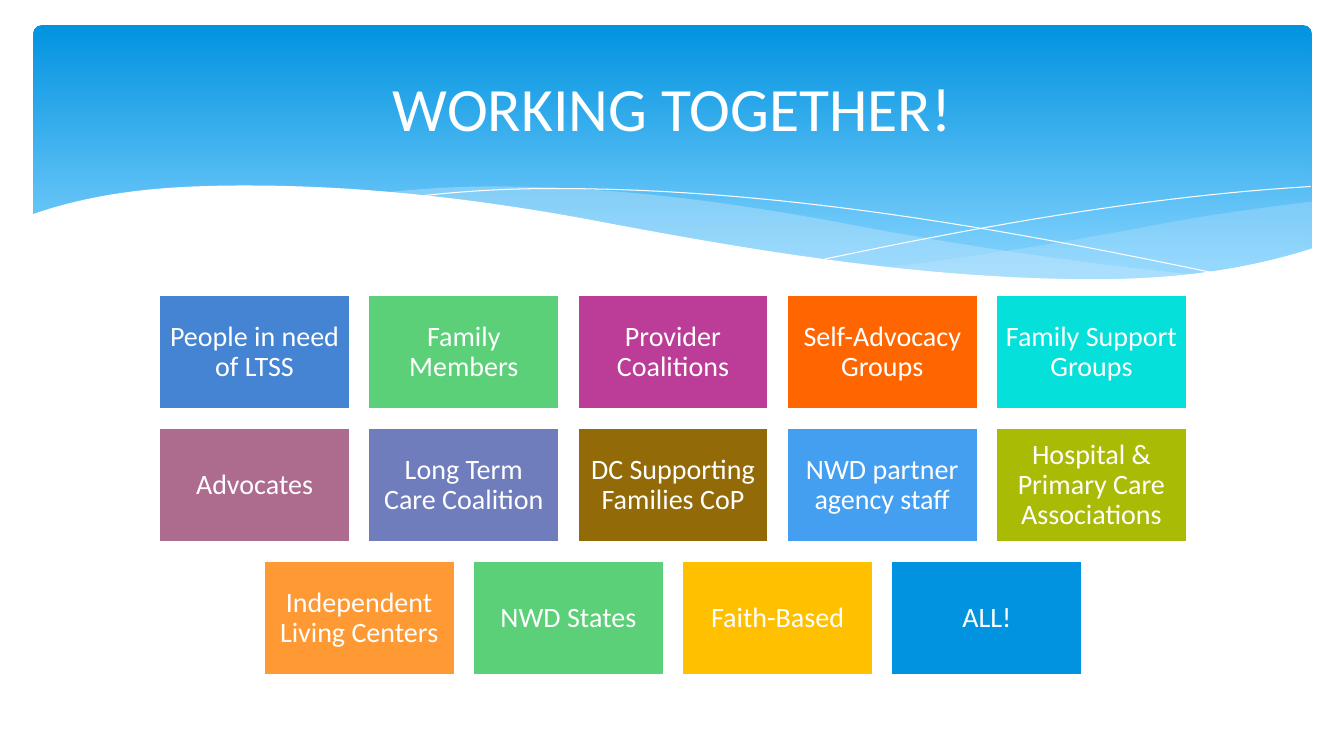
from itertools import pairwise

from lxml import etree
from pptx import Presentation
from pptx.dml.color import RGBColor
from pptx.enum import shapes, text
from pptx.oxml import ns
from pptx.util import Inches, Pt

WHITE = RGBColor(0xFF, 0xFF, 0xFF)
SKY = RGBColor(0x02, 0x93, 0xE0)
LIGHT_SKY = RGBColor(0x83, 0xD3, 0xFE)
PALE = RGBColor(0xC6, 0xE7, 0xFC)
BLUE = RGBColor(0x45, 0x84, 0xD3)
GREEN = RGBColor(0x5B, 0xD0, 0x78)
MAGENTA = RGBColor(0xBB, 0x3D, 0x97)
ORANGE = RGBColor(0xFF, 0x66, 0x00)
TURQUOISE = RGBColor(0x05, 0xE0, 0xDB)
MAUVE = RGBColor(0xAD, 0x6B, 0x8E)
PERIWINKLE = RGBColor(0x70, 0x7D, 0xBC)
BROWN = RGBColor(0x93, 0x6A, 0x08)
AZURE = RGBColor(0x45, 0x9F, 0xF1)
OLIVE = RGBColor(0xAA, 0xBB, 0x05)
APRICOT = RGBColor(0xFF, 0x99, 0x33)
GOLD = RGBColor(0xFF, 0xC0, 0x00)

FONT = "Calibri"
HEADING = "WORKING TOGETHER!"
PARTNER_ROWS = [
    [("People in need of LTSS", BLUE), ("Family Members", GREEN),
     ("Provider Coalitions", MAGENTA), ("Self-Advocacy Groups", ORANGE),
     ("Family Support Groups", TURQUOISE)],
    [("Advocates", MAUVE), ("Long Term Care Coalition", PERIWINKLE),
     ("DC Supporting Families CoP", BROWN), ("NWD partner agency staff", AZURE),
     ("Hospital & Primary Care Associations", OLIVE)],
    [("Independent Living Centers", APRICOT), ("NWD States", GREEN),
     ("Faith-Based", GOLD), ("ALL!", SKY)],
]

BANNER_STOPS = [(0, SKY), (0.9, LIGHT_SKY)]

# Each wave knot is (x, y, slope); a slope of 0 marks a crest or a trough.
RIGHT_SWELL = {
    "upper": [(8.82, 2.65, -0.12), (11.47, 2.23, -0.19), (13.01, 2, -0.12)],
    "lower": [(8.82, 2.65, 0.11), (10.71, 2.78, 0), (13.01, 2.47, -0.29)],
    "opacity": 29,
}
MIDDLE_SWELL = {
    "upper": [(3.82, 1.91, -0.11), (4.9, 1.85, 0), (8.39, 2.22, 0.19),
              (11.9, 2.73, 0.1)],
    "lower": [(3.82, 1.91, 0.11), (5.99, 2.22, 0.19), (10.75, 2.78, 0),
              (11.9, 2.73, -0.09)],
    "opacity": 40,
}
FALLING_LINE = [(4.12, 1.95, -0.12), (5.5, 1.87, 0), (12.1, 2.72, 0.21)]
RISING_LINE = [(8.18, 2.57, -0.21), (13, 1.85, -0.06)]
PAGE_EDGE = [(0.31, 2.13, -0.35), (2.45, 1.84, 0), (5.96, 2.2, 0.19),
             (10.85, 2.77, 0), (13.03, 2.46, -0.32)]
PAGE_BOTTOM = 3.29
STEPS_PER_SPAN = 24

FIRST_LEFT, LAST_LEFT = 1.58, 9.88
FIRST_TOP, ROW_PITCH = 2.93, 1.32
TILE_WIDTH, TILE_HEIGHT = 1.89, 1.13
TILE_INSET = 0.08


def curve(knots):
    points = [knots[0][:2]]
    for (x0, y0, slope0), (x1, y1, slope1) in pairwise(knots):
        span = x1 - x0
        for step in range(1, STEPS_PER_SPAN + 1):
            t = step / STEPS_PER_SPAN
            blend = t * t * (3 - 2 * t)
            bend = t * (1 - t) * (slope0 * (1 - t) - slope1 * t)
            points.append((x0 + span * t, y0 + (y1 - y0) * blend + span * bend))
    return points


def trace(slide, points, closed):
    corners = [(Inches(x), Inches(y)) for x, y in points]
    builder = slide.shapes.build_freeform(*corners[0])
    builder.add_line_segments(corners[1:], close=closed)
    outline = builder.convert_to_shape()
    outline.shadow.inherit = False
    return outline


def add_area(slide, points, color):
    area = trace(slide, points, True)
    area.fill.solid()
    area.fill.fore_color.rgb = color
    area.line.fill.background()
    return area


def add_swell(slide, swell):
    points = curve(swell["upper"]) + curve(swell["lower"])[::-1]
    area = add_area(slide, points, PALE)
    tint = area.element.spPr.find(".//" + ns.qn("a:srgbClr"))
    etree.SubElement(tint, ns.qn("a:alpha"), val=str(swell["opacity"] * 1000))


def add_crest_line(slide, knots):
    crest = trace(slide, curve(knots), False)
    crest.fill.background()
    crest.line.color.rgb = WHITE
    crest.line.width = Pt(0)


def add_page_edge(slide):
    left, right = PAGE_EDGE[0][0], PAGE_EDGE[-1][0]
    bottom = [(right, PAGE_BOTTOM), (left, PAGE_BOTTOM)]
    add_area(slide, curve(PAGE_EDGE) + bottom, WHITE)


def add_banner(slide):
    banner = slide.shapes.add_shape(
        shapes.MSO_SHAPE.ROUNDED_RECTANGLE,
        Inches(0.33), Inches(0.25), Inches(12.68), Inches(2.7))
    banner.adjustments[0] = 0.03
    banner.shadow.inherit = False
    banner.line.fill.background()
    banner.fill.gradient()
    banner.fill.gradient_angle = 270
    for stop, (position, color) in zip(banner.fill.gradient_stops, BANNER_STOPS):
        stop.position = position
        stop.color.rgb = color


def write(frame, words, size):
    frame.word_wrap = True
    frame.vertical_anchor = text.MSO_ANCHOR.MIDDLE
    paragraph = frame.paragraphs[0]
    paragraph.alignment = text.PP_ALIGN.CENTER
    run = paragraph.add_run()
    run.text = words
    run.font.name = FONT
    run.font.size = Pt(size)
    run.font.color.rgb = WHITE
    return paragraph


def add_partner(slide, left, top, partner, color):
    tile = slide.shapes.add_shape(
        shapes.MSO_SHAPE.RECTANGLE,
        Inches(left), Inches(top), Inches(TILE_WIDTH), Inches(TILE_HEIGHT))
    tile.shadow.inherit = False
    tile.fill.solid()
    tile.fill.fore_color.rgb = color
    tile.line.color.rgb = WHITE
    tile.line.width = Pt(1.25)
    frame = tile.text_frame
    frame.margin_left = frame.margin_right = Inches(TILE_INSET)
    frame.margin_top = frame.margin_bottom = Inches(TILE_INSET)
    write(frame, partner, 20).line_spacing = 0.9


def add_partners(slide):
    columns = max(len(row) for row in PARTNER_ROWS)
    pitch = (LAST_LEFT - FIRST_LEFT) / (columns - 1)
    for row_number, row in enumerate(PARTNER_ROWS):
        row_left = FIRST_LEFT + (columns - len(row)) * pitch / 2
        top = FIRST_TOP + row_number * ROW_PITCH
        for column, (partner, color) in enumerate(row):
            add_partner(slide, row_left + column * pitch, top, partner, color)


def add_heading(slide):
    heading = slide.shapes.title
    heading.left, heading.top = Inches(0.67), Inches(0.37)
    heading.width, heading.height = Inches(12), Inches(1.37)
    write(heading.text_frame, HEADING, 44)
    heading.element.getparent().append(heading.element)


def main():
    deck = Presentation()
    deck.slide_width, deck.slide_height = Inches(13.33), Inches(7.5)
    slide = deck.slides.add_slide(deck.slide_layouts[5])
    add_banner(slide)
    for swell in (RIGHT_SWELL, MIDDLE_SWELL):
        add_swell(slide, swell)
    for knots in (FALLING_LINE, RISING_LINE):
        add_crest_line(slide, knots)
    add_page_edge(slide)
    add_partners(slide)
    add_heading(slide)
    deck.save("out.pptx")


if __name__ == "__main__":
    main()
